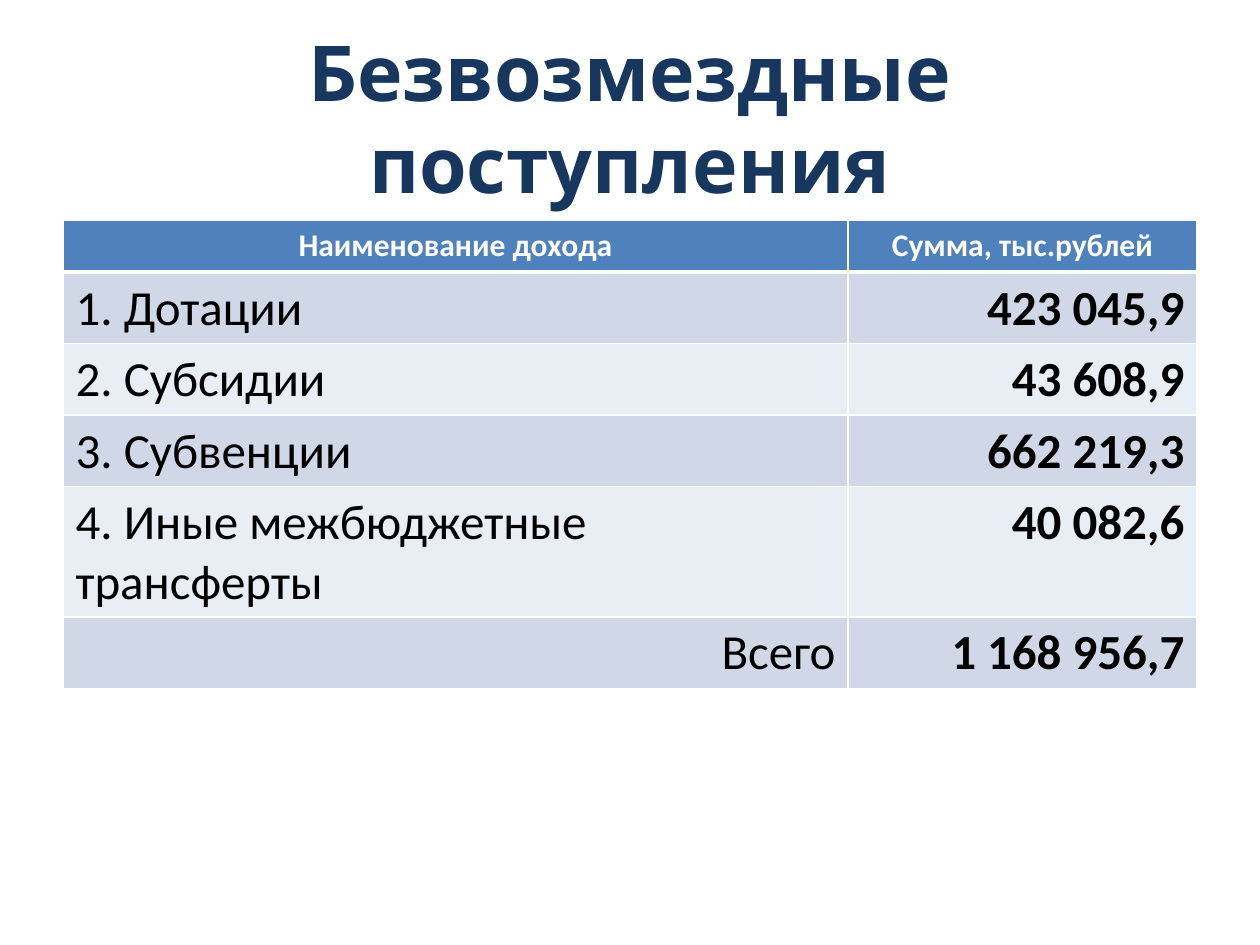
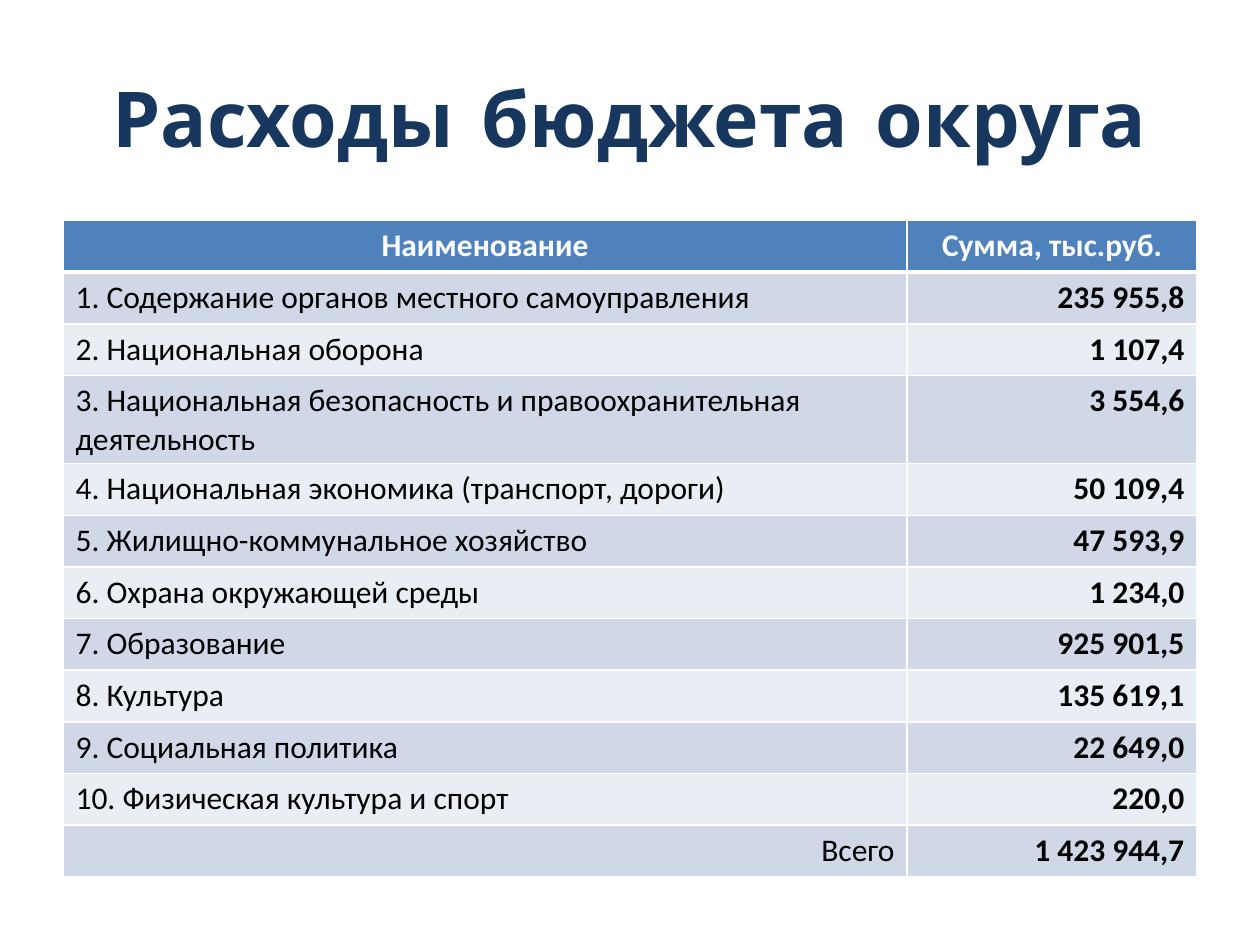
import pptx
import pptx.util
import pptx.dml.color
import pptx.enum.text
import pptx.oxml
import pptx.oxml.ns
import lxml.etree

COLOURS = {
    "title": "17375E",
    "header": "4F81BD",
    "odd": "D0D8E8",
    "even": "E9EDF4",
    "text": "000000",
    "line": "FFFFFF",
}
ALIGN = pptx.enum.text.PP_ALIGN
WIDTH = pptx.util.Inches(10)
HEIGHT = pptx.util.Inches(7.5)
TITLE_BOX = (0.05, 0.04, 0.9, 1 / 6)
TABLE_BOX = (0.05, 7 / 30, 0.9)
ROW_HEIGHT = pptx.util.Inches(0.41)
TITLE_FORMAT = {"name": "Comic Neue", "size": pptx.util.Pt(44), "bold": True}
HEADER_FORMAT = {"name": "Calibri", "size": pptx.util.Pt(18), "bold": True}

INCOME = [
    ("1. Дотации", "423 045,9"),
    ("2. Субсидии", "43 608,9"),
    ("3. Субвенции", "662 219,3"),
    ("4. Иные межбюджетные трансферты", "40 082,6"),
    ("Всего", "1 168 956,7"),
]
EXPENSES = [
    ("1. Содержание органов местного самоуправления", "235 955,8"),
    ("2. Национальная оборона", "1 107,4"),
    ("3. Национальная безопасность и правоохранительная деятельность", "3 554,6"),
    ("4. Национальная экономика (транспорт, дороги)", "50 109,4"),
    ("5. Жилищно-коммунальное хозяйство", "47 593,9"),
    ("6. Охрана окружающей среды", "1 234,0"),
    ("7. Образование", "925 901,5"),
    ("8. Культура", "135 619,1"),
    ("9. Социальная политика", "22 649,0"),
    ("10. Физическая культура и спорт", "220,0"),
    ("Всего", "1 423 944,7"),
]
PAGES = [
    {
        "title": "Безвозмездные поступления",
        "header": ("Наименование дохода", "Сумма, тыс.рублей"),
        "rows": INCOME,
        "name_share": 6.23 / 9,
        "size": 28,
    },
    {
        "title": "Расходы бюджета округа",
        "header": ("Наименование", "Сумма, тыс.руб."),
        "rows": EXPENSES,
        "name_share": 6.7 / 9,
        "size": 18,
    },
]


def colour(name):
    return pptx.dml.color.RGBColor.from_string(COLOURS[name])


def write(frame, text, align, colour_name, formats):
    para = frame.paragraphs[0]
    para.alignment = align
    span = para.add_run()
    span.text = text
    for key, value in formats.items():
        setattr(span.font, key, value)
    span.font.color.rgb = colour(colour_name)


def add_title(page, text, box):
    left, top, width, height = box
    shape = page.shapes.add_textbox(
        round(left * WIDTH), round(top * HEIGHT), round(width * WIDTH), round(height * HEIGHT)
    )
    frame = shape.text_frame
    frame.word_wrap = True
    frame.vertical_anchor = pptx.enum.text.MSO_ANCHOR.MIDDLE
    write(frame, text, ALIGN.CENTER, "title", TITLE_FORMAT)


def add_borders(cell, row):
    widths = {"lnL": 1, "lnR": 1, "lnT": 3 if row == 1 else 1, "lnB": 3 if row == 0 else 1}
    properties = cell._tc.get_or_add_tcPr()
    for index, (tag, points) in enumerate(widths.items()):
        line = lxml.etree.Element(pptx.oxml.ns.qn(f"a:{tag}"), w=str(pptx.util.Pt(points)))
        fill = lxml.etree.SubElement(line, pptx.oxml.ns.qn("a:solidFill"))
        lxml.etree.SubElement(fill, pptx.oxml.ns.qn("a:srgbClr"), val=COLOURS["line"])
        properties.insert(index, line)


def fill_cell(cell, text, row, column, is_total, size):
    cell.fill.solid()
    if row == 0:
        cell.fill.fore_color.rgb = colour("header")
        write(cell.text_frame, text, ALIGN.CENTER, "line", HEADER_FORMAT)
    else:
        cell.fill.fore_color.rgb = colour("odd" if row % 2 else "even")
        is_amount = column == 1
        align = ALIGN.RIGHT if is_amount or is_total else ALIGN.LEFT
        formats = {"name": "Calibri", "size": pptx.util.Pt(size), "bold": is_amount}
        write(cell.text_frame, text, align, "text", formats)
    add_borders(cell, row)


def add_budget_table(page, content, box):
    left, top, width = box
    rows = [content["header"], *content["rows"]]
    table_width = round(width * WIDTH)
    table = page.shapes.add_table(
        len(rows), 2, round(left * WIDTH), round(top * HEIGHT), table_width, ROW_HEIGHT * len(rows)
    ).table
    table.columns[0].width = round(table_width * content["name_share"])
    table.columns[1].width = table_width - table.columns[0].width
    for row, texts in enumerate(rows):
        table.rows[row].height = ROW_HEIGHT
        for column, text in enumerate(texts):
            is_total = row == len(rows) - 1
            fill_cell(table.cell(row, column), text, row, column, is_total, content["size"])


def main():
    deck = pptx.Presentation()
    deck.slide_width = WIDTH
    deck.slide_height = HEIGHT
    for content in PAGES:
        page = deck.slides.add_slide(deck.slide_layouts[6])
        add_title(page, content["title"], TITLE_BOX)
        add_budget_table(page, content, TABLE_BOX)
    deck.save("out.pptx")


if __name__ == "__main__":
    main()
